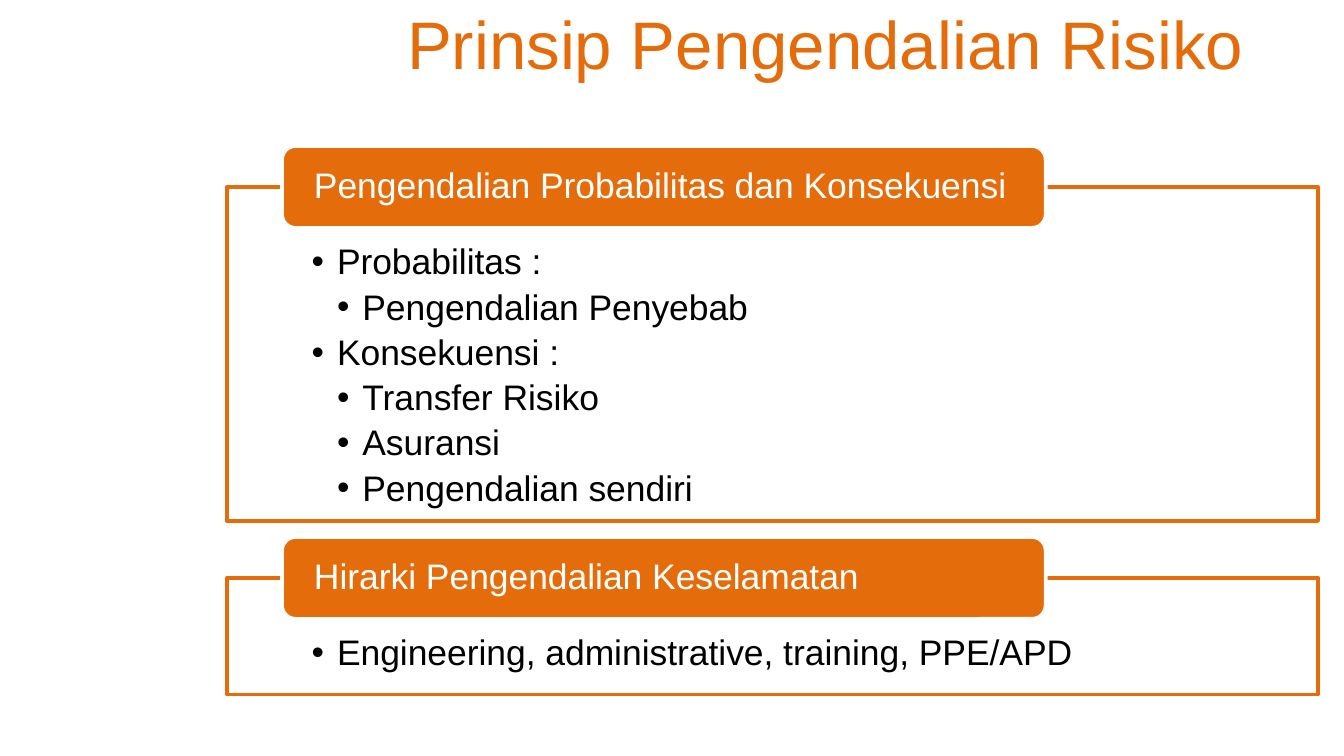
from lxml.etree import SubElement
from pptx import Presentation
from pptx.dml.color import RGBColor
from pptx.enum.shapes import MSO_SHAPE
from pptx.enum.text import MSO_ANCHOR, PP_ALIGN
from pptx.oxml.ns import qn
from pptx.util import Cm, Pt

COLORS = {"accent": "E46C0A", "paper": "FFFFFF", "ink": "000000"}
FONT = "Arial"
STEP = 0.48  # indent per bullet level, cm
GAP = 1.07  # between panels, cm

PANELS = [
    ("Pengendalian Probabilitas dan Konsekuensi", 6.32, [
        (1, "Probabilitas :"),
        (2, "Pengendalian Penyebab"),
        (1, "Konsekuensi :"),
        (2, "Transfer Risiko"),
        (2, "Asuransi"),
        (2, "Pengendalian sendiri"),
    ]),
    ("Hirarki Pengendalian Keselamatan", 2.21, [
        (1, "Engineering, administrative, training, PPE/APD"),
    ]),
]


def color(name):
    return RGBColor.from_string(COLORS[name])


def style(para, size, name):
    for run in para.runs:
        run.font.name = FONT
        run.font.size = Pt(size)
        run.font.color.rgb = color(name)


def margins(frame, left, top, right, bottom):
    frame.word_wrap = True
    frame.margin_left, frame.margin_right = Cm(left), Cm(right)
    frame.margin_top, frame.margin_bottom = Cm(top), Cm(bottom)


def add_block(slide, kind, box, fill, line):
    shape = slide.shapes.add_shape(kind, *map(Cm, box))
    shape.shadow.inherit = False
    shape.fill.solid()
    shape.fill.fore_color.rgb = color(fill)
    shape.line.color.rgb = color(line)
    shape.line.width = Pt(2)
    return shape


def add_bullet(para, level):
    props = para._p.get_or_add_pPr()
    props.set("marL", str(Cm(STEP * level)))
    props.set("indent", str(-Cm(STEP)))
    SubElement(props, qn("a:buFont"), typeface=FONT)
    SubElement(props, qn("a:buChar"), char="•")


def add_title(slide, box, text):
    frame = slide.shapes.add_textbox(*map(Cm, box)).text_frame
    frame.word_wrap = True
    frame.vertical_anchor = MSO_ANCHOR.MIDDLE
    frame.text = text
    para = frame.paragraphs[0]
    para.alignment = PP_ALIGN.CENTER
    style(para, 36, "accent")


def add_list(slide, box, items):
    shape = add_block(slide, MSO_SHAPE.RECTANGLE, box, "paper", "accent")
    tint = shape._element.spPr.find(qn("a:solidFill"))[0]
    SubElement(tint, qn("a:alpha"), val="90000")
    frame = shape.text_frame
    margins(frame, 1.6, 1.09, 1.6, 0.38)
    frame.vertical_anchor = MSO_ANCHOR.TOP
    frame.text = "\n".join(text for _, text in items)
    for para, (level, _) in zip(frame.paragraphs, items):
        para.level = level
        para.alignment = PP_ALIGN.LEFT
        para.line_spacing = 0.9
        para.space_after = Pt(3.7)
        add_bullet(para, level)
        style(para, 19, "ink")


def add_tab(slide, box, text):
    shape = add_block(slide, MSO_SHAPE.ROUNDED_RECTANGLE, box, "accent", "paper")
    frame = shape.text_frame
    margins(frame, 0.53, 0, 0.53, 0)
    frame.vertical_anchor = MSO_ANCHOR.MIDDLE
    frame.text = text
    para = frame.paragraphs[0]
    para.alignment = PP_ALIGN.LEFT
    para.line_spacing = 0.9
    style(para, 19, "paper")


def add_panel(slide, box, head, items):
    """Outlined list with a heading tab over its top edge."""
    left, top, width, _ = box
    add_list(slide, box, items)
    add_tab(slide, (left + 1.04, top - 0.77, width * 0.7, 1.55), head)


def main():
    deck = Presentation()
    deck.slide_width, deck.slide_height = Cm(25.4), Cm(14.29)
    slide = deck.slides.add_slide(deck.slide_layouts[6])
    add_title(slide, (2.9, 0, 25.4, 1.6), "Prinsip Pengendalian Risiko")
    top = 3.53
    for head, height, items in PANELS:
        add_panel(slide, (4.29, top, 20.62, height), head, items)
        top += height + GAP
    deck.save("out.pptx")


if __name__ == "__main__":
    main()
